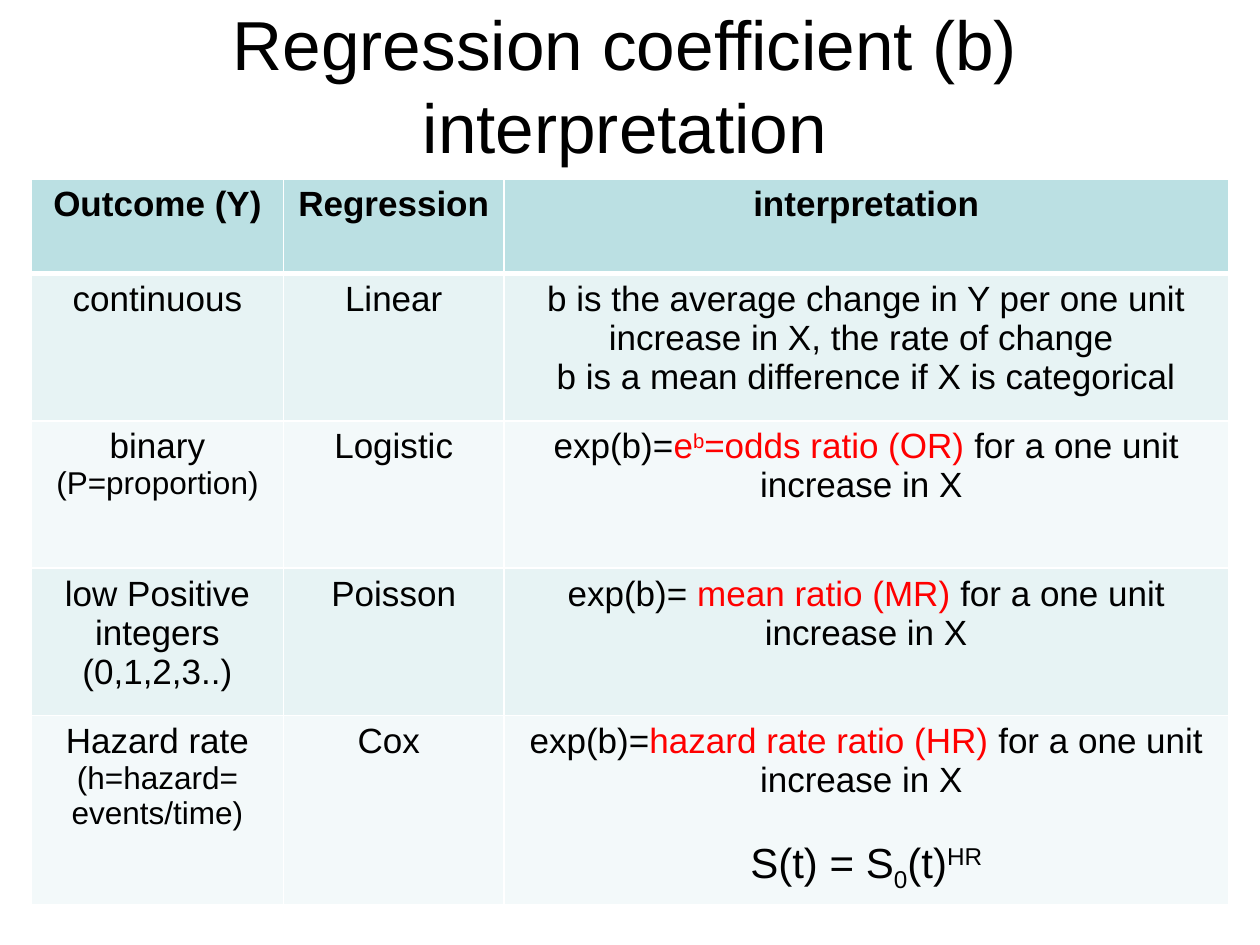
from dataclasses import dataclass

from lxml import etree
from pptx import Presentation
from pptx.dml.color import RGBColor
from pptx.enum.text import MSO_ANCHOR, MSO_AUTO_SIZE, PP_ALIGN
from pptx.oxml.ns import qn
from pptx.util import Inches, Pt

CENTER = PP_ALIGN.CENTER
MIDDLE = MSO_ANCHOR.MIDDLE
NO_AUTOFIT = MSO_AUTO_SIZE.NONE
TITLE_ONLY = 5


@dataclass(frozen=True)
class Theme:
    font: str = "Arial"
    text: str = "000000"
    accent: str = "FF0000"
    header: str = "BBE0E3"
    odd_row: str = "E7F3F4"
    even_row: str = "F3F9FA"
    border: str = "FFFFFF"
    title_size: float = 39.6
    body_size: float = 20
    note_size: float = 18
    formula_size: float = 24
    formula_gap: float = 23


THEME = Theme()


@dataclass(frozen=True)
class Span:
    text: str
    color: str = THEME.text
    baseline: int = 0


@dataclass(frozen=True)
class Line:
    spans: tuple[Span, ...]
    size: float = THEME.body_size
    before: float = 0


@dataclass(frozen=True)
class Model:
    outcome: tuple[Line, ...]
    regression: str
    interpretation: tuple[Line, ...]


def plain(text: str, size: float = THEME.body_size) -> Line:
    return Line((Span(text),), size)


def ratio(*effect: Span, start: str = "exp(b)=", end: str = "for a one unit increase in X ") -> Line:
    return Line((Span(start), *effect, Span(end)))


def red(text: str, baseline: int = 0) -> Span:
    return Span(text, THEME.accent, baseline)


HEADINGS = ("Outcome (Y)", "Regression", "interpretation")
MODELS = (
    Model(
        (plain("continuous"),),
        "Linear",
        (
            plain("b is the average change in Y per one unit increase in X, the rate of change "),
            plain("b is a mean difference if X is categorical"),
        ),
    ),
    Model(
        (plain("binary"), plain("(P=proportion)", THEME.note_size)),
        "Logistic",
        (ratio(red("e"), red("b", 30), red("=odds ratio (OR) ")),),
    ),
    Model(
        (plain("low Positive integers (0,1,2,3..)"),),
        "Poisson",
        (ratio(red("mean ratio (MR) "), start="exp(b)= ", end="for a one unit increase in X"),),
    ),
    Model(
        (
            plain("Hazard rate"),
            plain("(h=hazard=", THEME.note_size),
            plain("events/time)", THEME.note_size),
        ),
        "Cox ",
        (
            ratio(red("hazard rate ratio (HR) ")),
            Line(
                (Span("S(t) = S"), Span("0", baseline=-25), Span("(t)"), Span("HR", baseline=30)),
                THEME.formula_size,
                THEME.formula_gap,
            ),
        ),
    ),
)
COLUMN_WIDTHS = (2, 1.75, 5.75)
ROW_HEIGHTS = (0.75, 1.17, 1.17, 1.17, 1.5)


def write_text(frame, lines: tuple[Line, ...], *, bold: bool = False) -> None:
    frame.word_wrap = True
    for index, line in enumerate(lines):
        paragraph = frame.add_paragraph() if index else frame.paragraphs[0]
        paragraph.alignment = CENTER
        if line.before:
            paragraph.space_before = Pt(line.before)
        for span in line.spans:
            run = paragraph.add_run()
            run.text = span.text
            run.font.name = THEME.font
            run.font.size = Pt(line.size)
            run.font.bold = bold
            run.font.color.rgb = RGBColor.from_string(span.color)
            if span.baseline:
                run._r.get_or_add_rPr().set("baseline", str(span.baseline * 1000))


def set_borders(cell, *, top: float, bottom: float) -> None:
    properties = cell._tc.get_or_add_tcPr()
    for side, width in (("L", 1), ("R", 1), ("T", top), ("B", bottom)):
        border = etree.SubElement(properties, qn(f"a:ln{side}"), w=str(Pt(width)))
        solid = etree.SubElement(border, qn("a:solidFill"))
        etree.SubElement(solid, qn("a:srgbClr"), val=THEME.border)


def row_color(row: int) -> str:
    if row == 0:
        return THEME.header
    return THEME.odd_row if row % 2 else THEME.even_row


def add_title(slide, text: str) -> None:
    title = slide.shapes.title
    title.left, title.top = Inches(0.25), Inches(0.17)
    title.width, title.height = Inches(9.42), Inches(1)
    title.text_frame.auto_size = NO_AUTOFIT
    title.text_frame.vertical_anchor = MIDDLE
    write_text(title.text_frame, (plain(text, THEME.title_size),))


def add_model_table(slide) -> None:
    rows = [tuple((plain(heading),) for heading in HEADINGS)]
    rows += [(model.outcome, (plain(model.regression),), model.interpretation) for model in MODELS]
    table = slide.shapes.add_table(
        len(rows), len(HEADINGS), Inches(0.25), Inches(1.42),
        Inches(sum(COLUMN_WIDTHS)), Inches(sum(ROW_HEIGHTS)),
    ).table
    for column, width in zip(table.columns, COLUMN_WIDTHS):
        column.width = Inches(width)
    for row, height in zip(table.rows, ROW_HEIGHTS):
        row.height = Inches(height)
    for row, contents in enumerate(rows):
        for column, lines in enumerate(contents):
            cell = table.cell(row, column)
            set_borders(cell, top=3 if row == 1 else 1, bottom=3 if row == 0 else 1)
            cell.fill.solid()
            cell.fill.fore_color.rgb = RGBColor.from_string(row_color(row))
            write_text(cell.text_frame, lines, bold=row == 0)


def main() -> None:
    presentation = Presentation()
    presentation.slide_width = Inches(10)
    presentation.slide_height = Inches(7.5)
    slide = presentation.slides.add_slide(presentation.slide_layouts[TITLE_ONLY])
    add_title(slide, "Regression coefficient (b) interpretation")
    add_model_table(slide)
    presentation.save("out.pptx")


if __name__ == "__main__":
    main()
